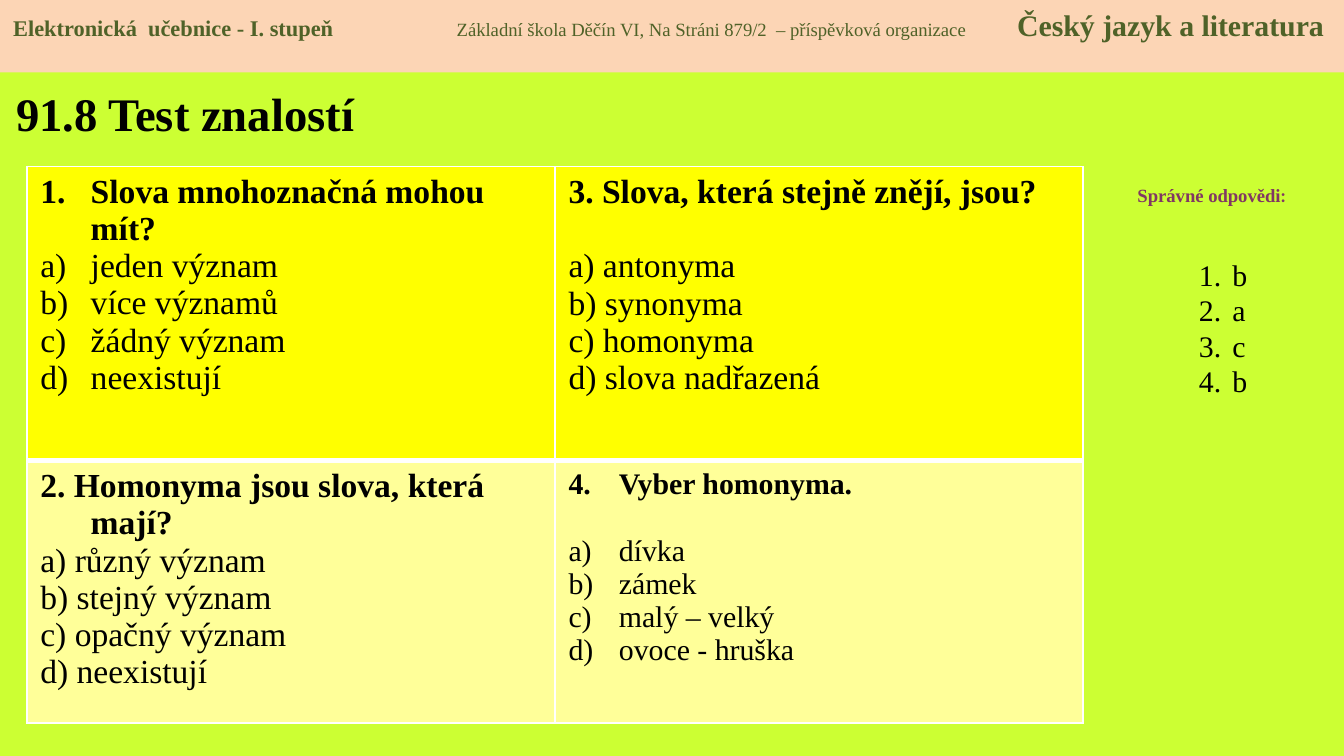
from lxml import etree
from pptx import Presentation
from pptx.dml.color import RGBColor
from pptx.enum.shapes import MSO_SHAPE
from pptx.enum.text import MSO_ANCHOR, MSO_AUTO_SIZE, PP_ALIGN
from pptx.oxml.ns import qn
from pptx.util import Inches, Pt

RECTANGLE = MSO_SHAPE.RECTANGLE
TOP = MSO_ANCHOR.TOP
FIXED = MSO_AUTO_SIZE.NONE
LEFT, CENTER = PP_ALIGN.LEFT, PP_ALIGN.CENTER

COLORS = {"background": "CCFF33", "band": "FCD5B5", "band text": "4F6228",
          "text": "000000", "answers": "813763", "border": "FFFFFF",
          "upper": "FFFF00", "lower": "FFFF99"}
SERIF, SANS = "Times New Roman", "Calibri"
NUMBERS, LETTERS = "arabicPeriod", "alphaLcParenR"
GRID_COLUMNS = 100
HANG = 3.75

# Each test item: question, first number if automatic, hanging question,
# options, automatic letters, text size, gap above the options in points
TEST = [
    [("Slova mnohoznačná mohou mít?", 1, True,
      ["jeden význam", "více významů", "žádný význam", "neexistují"],
      True, 18, 0),
     ("3. Slova, která stejně znějí, jsou?", None, False,
      ["a) antonyma", "b) synonyma", "c) homonyma", "d) slova nadřazená"],
      False, 18, 20)],
    [("2. Homonyma jsou slova, která mají?", None, True,
      ["a) různý význam", "b) stejný význam", "c) opačný význam",
       "d) neexistují"],
      False, 18, 0),
     ("Vyber homonyma.", 4, True,
      ["dívka", "zámek", "malý – velký", "ovoce - hruška"],
      True, 16, 18)],
]


class TestSlide:
    """Holds the slide, its style and a square grid of 100 columns."""

    def __init__(self, presentation):
        self.unit = presentation.slide_width / GRID_COLUMNS
        self.slide = presentation.slides.add_slide(presentation.slide_layouts[1])
        self.paint(self.slide.background.fill, "background")

    def cells(self, count):
        return int(count * self.unit)

    def paint(self, fill, color):
        fill.solid()
        fill.fore_color.rgb = RGBColor.from_string(COLORS[color])

    def style(self, run, size, bold=False, color="text", font=SERIF):
        run.font.name = font
        run.font.size = Pt(size)
        run.font.bold = bold
        run.font.color.rgb = RGBColor.from_string(COLORS[color])

    def hang(self, paragraph, indent):
        properties = paragraph._p.get_or_add_pPr()
        properties.set("marL", str(self.cells(indent)))
        properties.set("indent", str(-self.cells(indent)))
        return properties

    def number(self, paragraph, scheme, indent, start=1):
        """Give the paragraph an automatic number with a hanging indent."""
        properties = self.hang(paragraph, indent)
        etree.SubElement(properties, qn("a:buFont"), typeface=SERIF)
        numbering = etree.SubElement(properties, qn("a:buAutoNum"), type=scheme)
        if start > 1:
            numbering.set("startAt", str(start))

    def place(self, shape, left, top, width, height):
        shape.left, shape.top = self.cells(left), self.cells(top)
        shape.width, shape.height = self.cells(width), self.cells(height)

    def prepare(self, frame, margin_top):
        frame.word_wrap = True
        frame.auto_size = FIXED
        frame.vertical_anchor = TOP
        frame.margin_top = self.cells(margin_top)

    def title(self, text, box):
        heading = self.slide.shapes.title
        self.place(heading, *box)
        frame = heading.text_frame
        self.prepare(frame, 0.9)
        frame.text = text
        frame.paragraphs[0].alignment = LEFT
        self.style(frame.paragraphs[0].runs[0], 25, True)

    def band(self, parts, tab_stops, box):
        """Draw the top band; its parts are set apart by tab stops."""
        band = self.slide.shapes.add_shape(RECTANGLE, *map(self.cells, box))
        band.shadow.inherit = False
        self.paint(band.fill, "band")
        band.line.fill.background()
        self.prepare(band.text_frame, 0.5)
        paragraph = band.text_frame.paragraphs[0]
        paragraph.alignment = LEFT
        for text, size, bold in parts:
            run = paragraph.add_run()
            run.text = text
            self.style(run, size, bold, "band text")
        stops = etree.SubElement(paragraph._p.get_or_add_pPr(), qn("a:tabLst"))
        for stop in tab_stops:
            etree.SubElement(stops, qn("a:tab"), pos=str(self.cells(stop)), algn="l")

    def border(self, cell, widths):
        for side, width in widths.items():
            line = etree.SubElement(cell._tc.get_or_add_tcPr(), qn(f"a:ln{side}"),
                                    w=str(Pt(width)))
            fill = etree.SubElement(line, qn("a:solidFill"))
            etree.SubElement(fill, qn("a:srgbClr"), val=COLORS["border"])

    def test_item(self, cell, item):
        question, start, hanging, options, lettered, size, gap = item
        frame = cell.text_frame
        frame.text = "\n".join([question, *options])
        heading, *choices = frame.paragraphs
        self.style(heading.runs[0], size, True)
        if start:
            self.number(heading, NUMBERS, HANG, start)
        elif hanging:
            self.hang(heading, HANG)
        choices[0].space_before = Pt(gap)
        for choice in choices:
            self.style(choice.runs[0], size)
            if lettered:
                self.number(choice, LETTERS, HANG)

    def test(self, items, row_heights, box):
        table = self.slide.shapes.add_table(
            len(items), len(items[0]), *map(self.cells, box)).table
        for r, (row, color) in enumerate(zip(items, ("upper", "lower"))):
            table.rows[r].height = self.cells(row_heights[r])
            for c, item in enumerate(row):
                cell = table.cell(r, c)
                self.border(cell, {"L": 1, "R": 1, "T": 3 if r else 1,
                                   "B": 1 if r else 3})
                self.paint(cell.fill, color)
                self.test_item(cell, item)

    def caption(self, parts, box):
        frame = self.slide.shapes.add_textbox(*map(self.cells, box)).text_frame
        self.prepare(frame, 0.5)
        paragraph = frame.paragraphs[0]
        paragraph.alignment = CENTER
        for text, font in parts:
            run = paragraph.add_run()
            run.text = text
            self.style(run, 10, True, "answers", font)

    def answers(self, letters, box):
        body = self.slide.placeholders[1]
        self.place(body, *box)
        frame = body.text_frame
        self.prepare(frame, 3.2)
        frame.text = "\n".join(letters)
        for paragraph in frame.paragraphs:
            paragraph.space_before = Pt(0)
            paragraph.line_spacing = Pt(19)
            self.number(paragraph, NUMBERS, 2.5)
            self.style(paragraph.runs[0], 16)


def main():
    presentation = Presentation()
    presentation.slide_width = Inches(10)
    presentation.slide_height = presentation.slide_width * 9 // 16
    page = TestSlide(presentation)
    page.title("91.8 Test znalostí", (0.2, 5.4, 63.1, 9.4))
    page.band([("Elektronická  učebnice - I. stupeň\t", 12, True),
               ("Základní škola Děčín VI, Na Stráni 879/2  – příspěvková organizace\t",
                10, False),
               ("Český jazyk a literatura", 16, True)],
              (33, 74.7), (0, 0, 100, 5.4))
    page.test(TEST, (21.9, 19.5), (2, 12.4, 78.6, 41.4))
    page.caption([("Správné odpovědi", SERIF), (":", SANS)],
                 (82.3, 13.2, 15.7, 2.7))
    page.answers("bacb", (88.2, 15.9, 5.5, 17.2))
    presentation.save("out.pptx")


if __name__ == "__main__":
    main()
